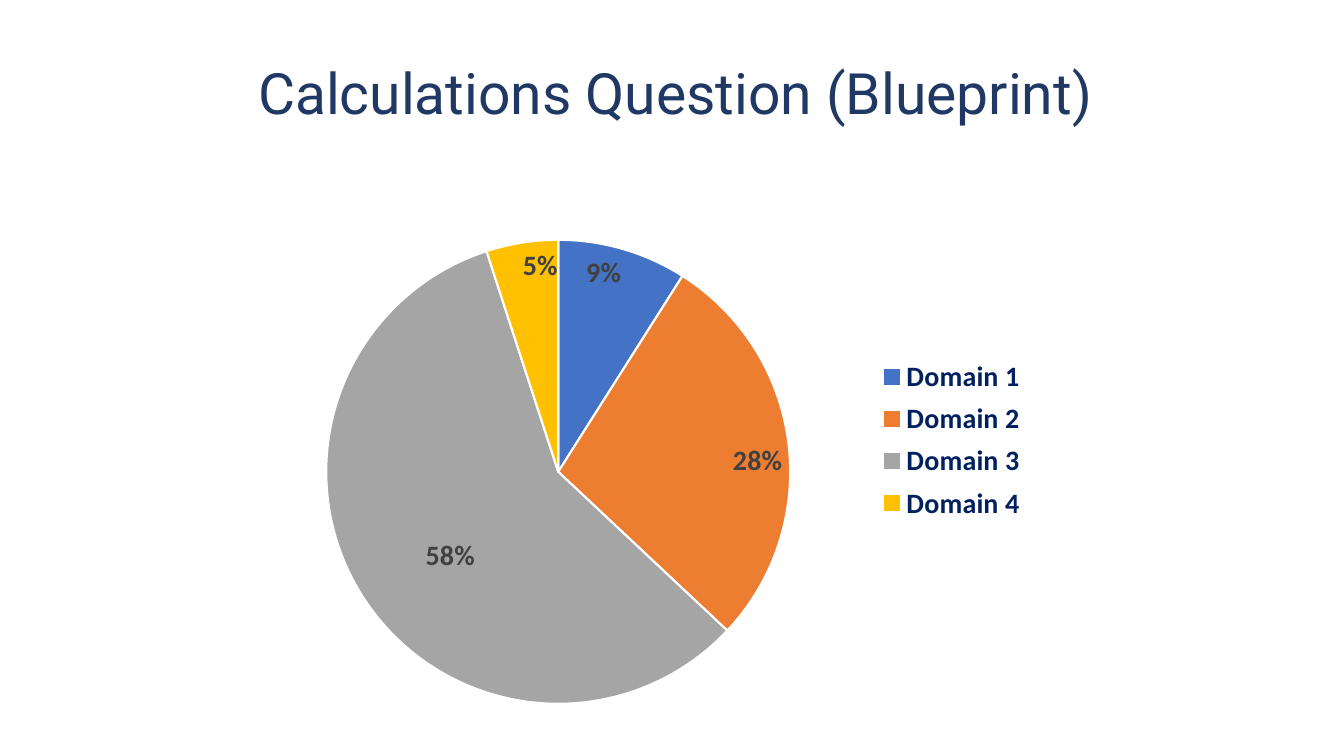
from typing import NamedTuple

from lxml import etree
from pptx import Presentation
from pptx.chart.chart import Chart
from pptx.chart.data import CategoryChartData
from pptx.dml.color import RGBColor
from pptx.enum.chart import XL_CHART_TYPE, XL_LABEL_POSITION, XL_LEGEND_POSITION
from pptx.enum.text import MSO_ANCHOR, MSO_AUTO_SIZE, PP_ALIGN
from pptx.oxml.ns import qn
from pptx.slide import Slide
from pptx.text.text import Font
from pptx.util import Cm, Pt

PIE = XL_CHART_TYPE.PIE
INSIDE_END = XL_LABEL_POSITION.INSIDE_END
CENTER = XL_LABEL_POSITION.CENTER
LEGEND_RIGHT = XL_LEGEND_POSITION.RIGHT
MIDDLE = MSO_ANCHOR.MIDDLE
NO_AUTO_SIZE = MSO_AUTO_SIZE.NONE
LEFT = PP_ALIGN.LEFT

WHITE = RGBColor(0xFF, 0xFF, 0xFF)
BLACK = RGBColor(0x00, 0x00, 0x00)
TITLE_BLUE = RGBColor(0x20, 0x38, 0x64)
LEGEND_NAVY = RGBColor(0x00, 0x20, 0x60)
LABEL_GRAY = RGBColor(0x40, 0x40, 0x40)
BLUE = RGBColor(0x44, 0x72, 0xC4)
ORANGE = RGBColor(0xED, 0x7D, 0x31)
GRAY = RGBColor(0xA5, 0xA5, 0xA5)
YELLOW = RGBColor(0xFF, 0xC0, 0x00)

TITLE_FORMAT = {"name": "Roboto", "size": Pt(40.7), "bold": False}
CHART_FORMAT = {"name": "Calibri", "size": Pt(10)}
EMPHASIS_FORMAT = {"name": "Calibri", "size": Pt(20), "bold": True}


class Domain(NamedTuple):
    name: str
    percent: int
    color: RGBColor


DOMAINS = [
    Domain("Domain 1", 9, BLUE),
    Domain("Domain 2", 28, ORANGE),
    Domain("Domain 3", 58, GRAY),
    Domain("Domain 4", 5, YELLOW),
]
CENTERED_LABEL = 2

# Fractions of the chart area
PLOT_LAYOUT = {"layoutTarget": "inner", "xMode": "edge", "yMode": "edge",
               "x": 0.2, "y": 0.1, "w": 0.47, "h": 0.87}
LEGEND_LAYOUT = {"xMode": "edge", "yMode": "edge",
                 "x": 0.75, "y": 0.31, "w": 0.16, "h": 0.33}
LABEL_LAYOUT = {"x": -0.01, "y": 0.04}


def format_font(font: Font, values: dict, color: RGBColor) -> None:
    for name, value in values.items():
        setattr(font, name, value)
    font.color.rgb = color


def set_layout(parent: etree.ElementBase, values: dict, index: int) -> None:
    """Place a chart part by hand, with its layout as the child at index."""
    for old_layout in parent.findall(qn("c:layout")):
        parent.remove(old_layout)
    layout = etree.Element(qn("c:layout"))
    manual = etree.SubElement(layout, qn("c:manualLayout"))
    for name, value in values.items():
        etree.SubElement(manual, qn(f"c:{name}")).set("val", str(value))
    parent.insert(index, layout)


def add_title(slide: Slide) -> None:
    title = slide.shapes.title
    title.left, title.top, title.width, title.height = (
        Cm(6.25), Cm(0.91), Cm(23.11), Cm(3))
    frame = title.text_frame
    frame.text = "Calculations Question (Blueprint)"
    frame.word_wrap = True
    frame.auto_size = NO_AUTO_SIZE
    frame.vertical_anchor = MIDDLE
    paragraph = frame.paragraphs[0]
    paragraph.alignment = LEFT
    paragraph.line_spacing = 0.9
    format_font(paragraph.runs[0].font, TITLE_FORMAT, TITLE_BLUE)


def format_labels(chart: Chart) -> None:
    plot = chart.plots[0]
    plot.has_data_labels = True
    labels = plot.data_labels
    labels.show_value = False
    labels.show_percentage = True
    labels.number_format = "0%"
    labels.number_format_is_linked = False
    labels.position = INSIDE_END
    format_font(labels.font, EMPHASIS_FORMAT, LABEL_GRAY)

    # The largest slice carries its label near its middle
    series = plot.series[0]
    label = series.points[CENTERED_LABEL].data_label
    format_font(label.font, EMPHASIS_FORMAT, LABEL_GRAY)
    label.position = CENTER
    series_labels = series.data_labels
    series_labels.show_value = False
    series_labels.show_percentage = True
    series_labels.number_format = "0%"
    series_labels.number_format_is_linked = False
    series_labels.position = INSIDE_END
    format_font(series_labels.font, EMPHASIS_FORMAT, LABEL_GRAY)
    element = chart.element.find(".//" + qn("c:dLbl"))
    element.find(qn("c:showVal")).set("val", "0")
    element.find(qn("c:showPercent")).set("val", "1")
    set_layout(element, LABEL_LAYOUT, 1)


def add_domain_chart(slide: Slide) -> None:
    data = CategoryChartData()
    data.categories = [domain.name for domain in DOMAINS]
    data.add_series("Series 1", [domain.percent for domain in DOMAINS])
    chart = slide.shapes.add_chart(
        PIE, Cm(3.15), Cm(4.7), Cm(25.1), Cm(13.44), data).chart
    chart.has_title = False
    format_font(chart.font, CHART_FORMAT, BLACK)

    # Slices
    plot = chart.plots[0]
    plot.vary_by_categories = True
    for index, domain in enumerate(DOMAINS):
        slice_format = plot.series[0].points[index].format
        slice_format.fill.solid()
        slice_format.fill.fore_color.rgb = domain.color
        slice_format.line.color.rgb = WHITE
        slice_format.line.width = Pt(1.5)
    format_labels(chart)

    # Legend
    chart.has_legend = True
    legend = chart.legend
    legend.position = LEGEND_RIGHT
    legend.include_in_layout = False
    format_font(legend.font, EMPHASIS_FORMAT, LEGEND_NAVY)

    set_layout(chart.element.find(".//" + qn("c:plotArea")), PLOT_LAYOUT, 0)
    set_layout(chart.element.find(".//" + qn("c:legend")), LEGEND_LAYOUT, 1)


def main() -> None:
    presentation = Presentation()
    presentation.slide_width = Cm(33.87)
    presentation.slide_height = Cm(19.05)
    slide = presentation.slides.add_slide(presentation.slide_layouts[5])
    add_title(slide)
    add_domain_chart(slide)
    presentation.save("out.pptx")


if __name__ == "__main__":
    main()
